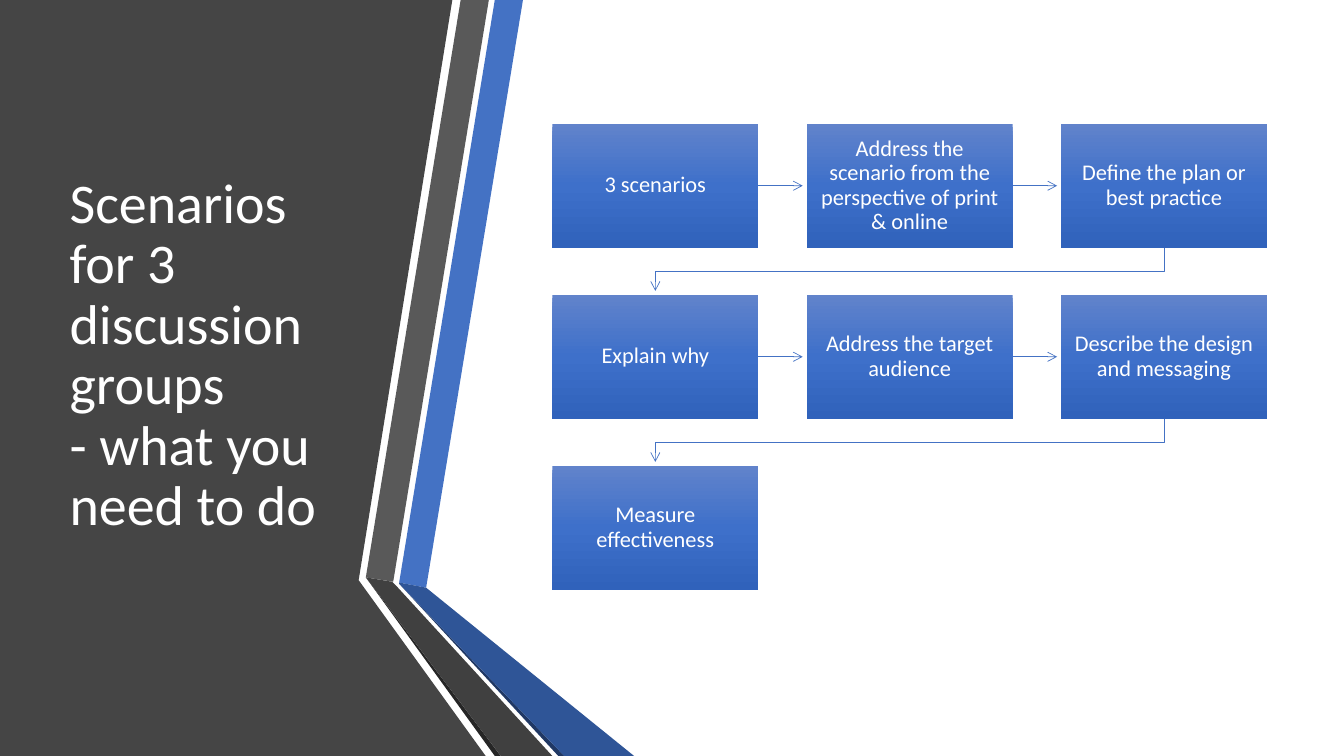
from dataclasses import dataclass

import lxml.etree
import pptx
import pptx.dml.color
import pptx.enum.shapes
import pptx.enum.text
import pptx.oxml
import pptx.oxml.ns
import pptx.util
from pptx.util import Cm

Point = tuple[float, float]


# Theme and element descriptions
@dataclass(frozen=True)
class Theme:
    font: str = "Calibri"
    title_size: int = 40
    step_size: int = 16
    line_width: float = 0.5
    text: str = "FFFFFF"
    panel: str = "454545"
    accent: str = "4472C4"
    accent_dark: str = "2F5597"
    accent_edge: str = "203864"
    grey: str = "595959"
    grey_dark: str = "404040"
    grey_edge: str = "262626"
    step_gradient: tuple[str, ...] = ("6183CB", "3E70CA", "3062BB")


@dataclass(frozen=True)
class Band:
    color: str
    points: tuple[Point, ...]


@dataclass(frozen=True)
class Grid:
    left: float = 13.92
    top: float = 3.12
    width: float = 5.19
    height: float = 3.12
    column_pitch: float = 6.41
    row_pitch: float = 4.31
    columns: int = 3
    arrow_clearance: float = 0.1

    def corner(self, index: int) -> Point:
        row, column = divmod(index, self.columns)
        return self.left + column * self.column_pitch, self.top + row * self.row_pitch


THEME = Theme()
GRID = Grid()
WIDTH, HEIGHT = 33.87, 19.05

BANDS = [
    Band(THEME.panel, ((0, 0), (11.4, 0), (9.04, 14.62), (12.24, HEIGHT), (0, HEIGHT))),
    Band(THEME.accent, ((10.06, 14.68), (10.74, 14.81), (13.18, 0), (12.47, 0))),
    Band(THEME.grey, ((12.32, 0), (11.61, 0), (9.22, 14.55), (9.91, 14.66))),
    Band(THEME.grey_edge, ((9.22, 14.55), (12.47, HEIGHT), (12.62, HEIGHT))),
    Band(THEME.accent_edge, ((10.06, 14.71), (14.07, HEIGHT), (14.22, HEIGHT))),
    Band(THEME.accent_dark, ((10.06, 14.71), (14.22, HEIGHT), (15.98, HEIGHT),
                             (10.74, 14.81), (10.06, 14.68))),
    Band(THEME.grey_dark, ((13.92, HEIGHT), (10.03, 14.81), (9.88, 14.66),
                           (9.22, 14.55), (12.62, HEIGHT))),
]

TITLE = "Scenarios for 3 discussion groups\v- what you need to do"
STEPS = [
    "3 scenarios",
    "Address the scenario from the perspective of print & online",
    "Define the plan or best practice",
    "Explain why",
    "Address the target audience",
    "Describe the design and messaging",
    "Measure effectiveness",
]


def rgb(color: str) -> pptx.dml.color.RGBColor:
    return pptx.dml.color.RGBColor.from_string(color)


def format_text(text_frame, size: int, alignment) -> None:
    text_frame.word_wrap = True
    text_frame.auto_size = pptx.enum.text.MSO_AUTO_SIZE.NONE
    text_frame.vertical_anchor = pptx.enum.text.MSO_ANCHOR.MIDDLE
    for paragraph in text_frame.paragraphs:
        paragraph.alignment = alignment
        paragraph.line_spacing = 0.9
        for run in paragraph.runs:
            run.font.name = THEME.font
            run.font.size = pptx.util.Pt(size)
            run.font.color.rgb = rgb(THEME.text)


def draw_band(slide, band: Band) -> None:
    corners = [(Cm(x), Cm(y)) for x, y in band.points]
    builder = slide.shapes.build_freeform(*corners[0])
    builder.add_line_segments(corners[1:], close=True)
    shape = builder.convert_to_shape()
    shape.shadow.inherit = False
    shape.fill.solid()
    shape.fill.fore_color.rgb = rgb(band.color)
    shape.line.fill.background()


def draw_title(slide) -> None:
    title = slide.shapes.title
    title.left, title.top = Cm(1.5), Cm(1.9)
    title.width, title.height = Cm(7.72), Cm(14.17)
    title.text_frame.text = TITLE
    format_text(title.text_frame, THEME.title_size, pptx.enum.text.PP_ALIGN.LEFT)
    # Bring the title in front of the panel
    title.element.getparent().append(title.element)


def fill_gradient(shape) -> None:
    shape.fill.gradient()
    shape.fill.gradient_angle = 270
    stop_list = shape.element.spPr.find(".//" + pptx.oxml.ns.qn("a:gsLst"))
    stop_list.clear()
    last = len(THEME.step_gradient) - 1
    for index, color in enumerate(THEME.step_gradient):
        stop = lxml.etree.SubElement(stop_list, pptx.oxml.ns.qn("a:gs"),
                                     pos=str(100000 * index // last))
        lxml.etree.SubElement(stop, pptx.oxml.ns.qn("a:srgbClr"), val=color)


def draw_step(slide, index: int, text: str) -> None:
    left, top = GRID.corner(index)
    shape = slide.shapes.add_shape(pptx.enum.shapes.MSO_SHAPE.RECTANGLE,
                                   Cm(left), Cm(top), Cm(GRID.width), Cm(GRID.height))
    shape.shadow.inherit = False
    shape.line.fill.background()
    fill_gradient(shape)
    text_frame = shape.text_frame
    text_frame.margin_left = text_frame.margin_right = Cm(0.25)
    text_frame.margin_top = text_frame.margin_bottom = Cm(0.28)
    text_frame.text = text
    format_text(text_frame, THEME.step_size, pptx.enum.text.PP_ALIGN.CENTER)


def add_arrow(slide, kind, begin: Point, end: Point):
    connector = slide.shapes.add_connector(kind, *(Cm(value) for value in begin + end))
    connector.line.color.rgb = rgb(THEME.accent)
    connector.line.width = pptx.util.Pt(THEME.line_width)
    properties = connector.element.spPr
    line = properties.find(pptx.oxml.ns.qn("a:ln"))
    lxml.etree.SubElement(line, pptx.oxml.ns.qn("a:tailEnd"), type="arrow")
    lxml.etree.SubElement(properties, pptx.oxml.ns.qn("a:effectLst"))
    return connector


def draw_straight_arrow(slide, index: int) -> None:
    left, top = GRID.corner(index)
    middle = top + GRID.height / 2
    tip = left + GRID.column_pitch - GRID.arrow_clearance
    add_arrow(slide, pptx.enum.shapes.MSO_CONNECTOR.STRAIGHT,
              (left + GRID.width, middle), (tip, middle))


def draw_return_arrow(slide, index: int) -> None:
    left, top = GRID.corner(index)
    next_left, next_top = GRID.corner(index + 1)
    begin_y, end_y = top + GRID.height, next_top - GRID.arrow_clearance
    drop, span = end_y - begin_y, left - next_left
    center_x = (left + next_left + GRID.width) / 2
    center_y = (begin_y + end_y) / 2
    # A quarter turn makes the elbow leave downwards and bend mid-gap
    connector = add_arrow(slide, pptx.enum.shapes.MSO_CONNECTOR.ELBOW,
                          (center_x - drop / 2, center_y - span / 2),
                          (center_x + drop / 2, center_y + span / 2))
    properties = connector.element.spPr
    properties.find(pptx.oxml.ns.qn("a:xfrm")).set("rot", "5400000")
    bend = round(100000 * (next_top - begin_y) / 2 / drop)
    adjustments = properties.find(".//" + pptx.oxml.ns.qn("a:avLst"))
    lxml.etree.SubElement(adjustments, pptx.oxml.ns.qn("a:gd"),
                          name="adj1", fmla=f"val {bend}")


def main() -> None:
    presentation = pptx.Presentation()
    presentation.slide_width, presentation.slide_height = Cm(WIDTH), Cm(HEIGHT)
    slide = presentation.slides.add_slide(presentation.slide_layouts.get_by_name("Title Only"))

    # Left panel with folded bands
    for band in BANDS:
        draw_band(slide, band)
    draw_title(slide)

    # Process steps, each with an arrow to the next
    for index, text in enumerate(STEPS):
        draw_step(slide, index, text)
        if index == len(STEPS) - 1:
            continue
        if (index + 1) % GRID.columns:
            draw_straight_arrow(slide, index)
        else:
            draw_return_arrow(slide, index)

    presentation.save("out.pptx")


if __name__ == "__main__":
    main()
